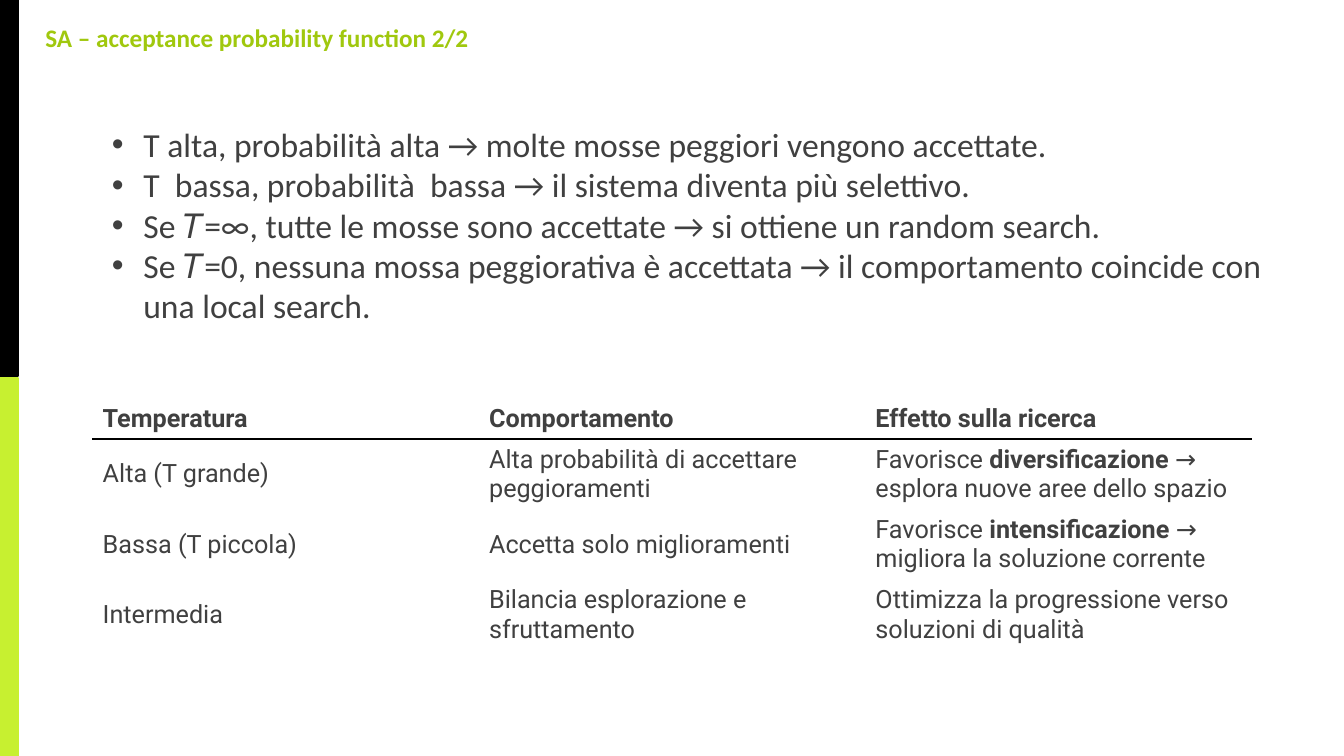
from lxml.etree import SubElement as Sub
from pptx import Presentation
from pptx.dml.color import RGBColor as Rgb
from pptx.enum.shapes import MSO_SHAPE as Shp
from pptx.enum.text import MSO_ANCHOR as Anchor, MSO_AUTO_SIZE as Fit, PP_ALIGN as Align
from pptx.oxml import parse_xml
from pptx.oxml.ns import nsdecls, qn
from pptx.util import Pt

HUES = {"black": "000000", "lime": "C7F030", "green": "A0C80E", "gray": "404040"}

HEAD = "SA – acceptance probability function 2/2"
RULES = [
    "T alta, probabilità alta → molte mosse peggiori vengono accettate.",
    "T  bassa, probabilità  bassa → il sistema diventa più selettivo.",
    "Se 𝑇=∞, tutte le mosse sono accettate → si ottiene un random search.",
    "Se 𝑇=0, nessuna mossa peggiorativa è accettata → il comportamento coincide con una local search.",
]
ROWS = [
    ["*Temperatura*", "*Comportamento*", "*Effetto sulla ricerca*"],
    ["Alta (T grande)", "Alta probabilità di accettare peggioramenti",
     "Favorisce *diversificazione* → esplora nuove aree dello spazio"],
    ["Bassa (T piccola)", "Accetta solo miglioramenti",
     "Favorisce *intensificazione* → migliora la soluzione corrente"],
    ["Intermedia", "Bilancia esplorazione e sfruttamento",
     "Ottimizza la progressione verso soluzioni di qualità"],
]

TITLE = {"name": "Calibri", "size": Pt(18)}
LIST = {"name": "Calibri", "size": Pt(24)}
CELL = {"name": "Roboto", "size": Pt(18)}
FRAME = {"word_wrap": True, "auto_size": Fit.NONE, "vertical_anchor": Anchor.TOP}
PARA = {"alignment": Align.LEFT, "space_before": Pt(0), "space_after": Pt(0)}


def apply(item, values):
    for key, value in values.items():
        setattr(item, key, value)


def write(para, text, font, hue):
    apply(para, PARA)
    for num, part in enumerate(text.split("*")):
        if part:
            run = para.add_run()
            run.text = part
            apply(run.font, {**font, "bold": num % 2 == 1})
            run.font.color.rgb = Rgb.from_string(HUES[hue])


def place(shape, left, top, width, height):
    box = {"left": left, "top": top, "width": width, "height": height}
    apply(shape, {key: Pt(value) for key, value in box.items()})


def bullet(para):
    props = para._p.get_or_add_pPr()
    props.set("marL", str(Pt(22.5)))
    props.set("indent", str(-Pt(22.5)))
    Sub(props, qn("a:buFont")).set("typeface", "Arial")
    Sub(props, qn("a:buChar")).set("char", "•")


def add_bar(slide, top, height, hue):
    bar = slide.shapes.add_shape(Shp.RECTANGLE, 0, Pt(top), Pt(13), Pt(height))
    bar.shadow.inherit = False
    color = Rgb.from_string(HUES[hue])
    bar.fill.solid()
    bar.fill.fore_color.rgb = color
    bar.line.color.rgb = color
    bar.line.width = Pt(1.5)


def add_head(slide):
    title = slide.shapes.title
    place(title, 25.2, 12.2, 623.5, 29)
    apply(title.text_frame, FRAME)
    write(title.text_frame.paragraphs[0], f"*{HEAD}*", TITLE, "green")


def add_list(slide):
    body = slide.placeholders[1]
    place(body, 72.7, 85, 845.3, 152.6)
    frame = body.text_frame
    apply(frame, FRAME)
    for num, text in enumerate(RULES):
        para = frame.add_paragraph() if num else frame.paragraphs[0]
        write(para, text, LIST, "gray")
        bullet(para)


def add_edge(cell, side):
    cell._tc.get_or_add_tcPr().insert(0, parse_xml(
        f'<a:{side} {nsdecls("a")} w="{Pt(1)}"><a:solidFill>'
        f'<a:srgbClr val="{HUES["black"]}"/></a:solidFill></a:{side}>'))


def add_grid(slide):
    grid = slide.shapes.add_table(
        len(ROWS), len(ROWS[0]), Pt(66.2), Pt(284.4), Pt(828), Pt(180)).table
    apply(grid, {"first_row": False, "horz_banding": False})
    for row, texts in enumerate(ROWS):
        grid.rows[row].height = Pt(50.25 if row else 29.25)
        for col, text in enumerate(texts):
            cell = grid.cell(row, col)
            cell.fill.background()
            cell.vertical_anchor = Anchor.MIDDLE
            write(cell.text_frame.paragraphs[0], text, CELL, "gray")
            if row < 2:
                add_edge(cell, "lnT" if row else "lnB")


def main():
    deck = Presentation()
    apply(deck, {"slide_width": Pt(960), "slide_height": Pt(540)})
    slide = deck.slides.add_slide(deck.slide_layouts[1])
    add_bar(slide, 270, 271.5, "lime")
    add_bar(slide, 0, 268.5, "black")
    add_head(slide)
    add_list(slide)
    add_grid(slide)
    deck.save("out.pptx")


if __name__ == "__main__":
    main()
